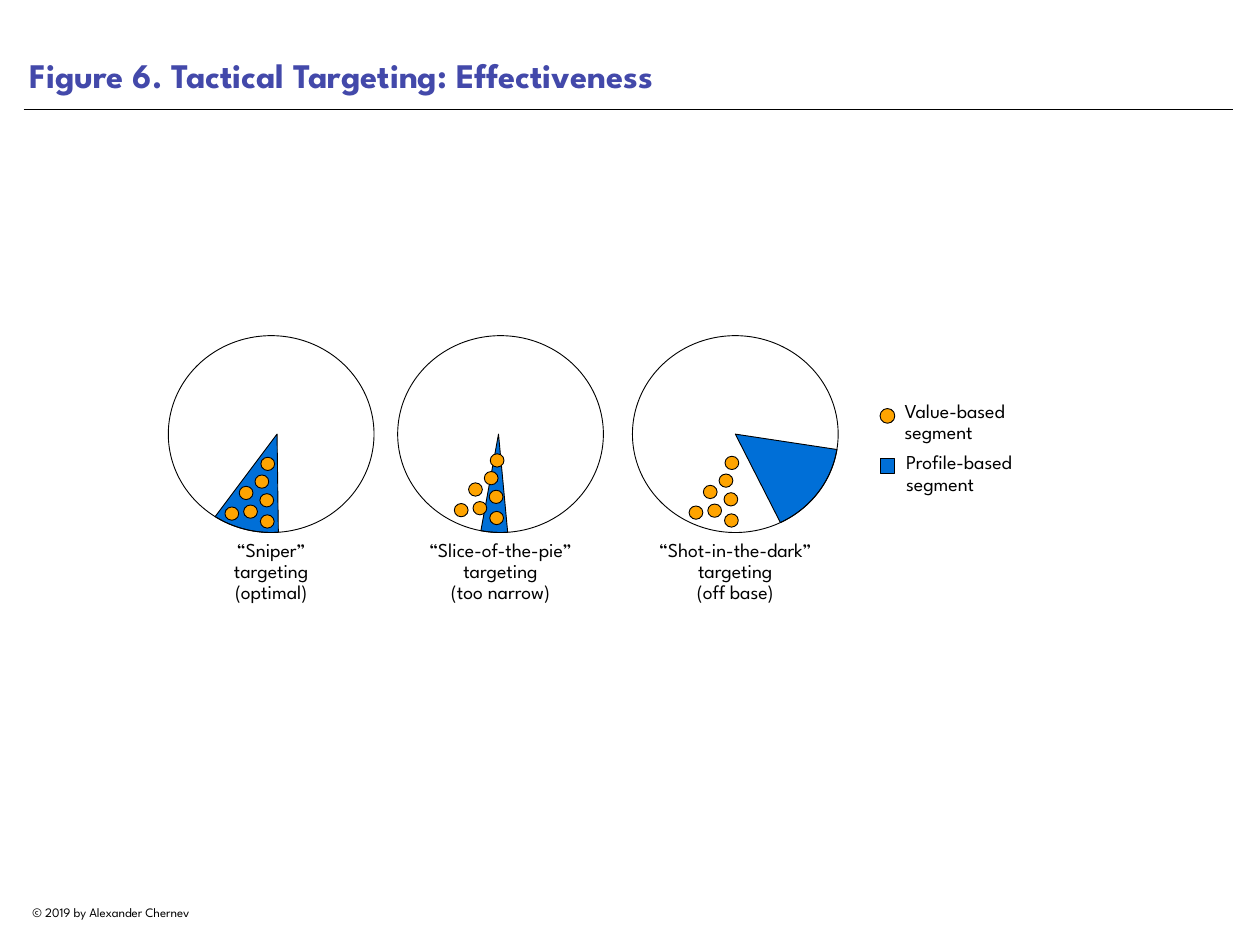
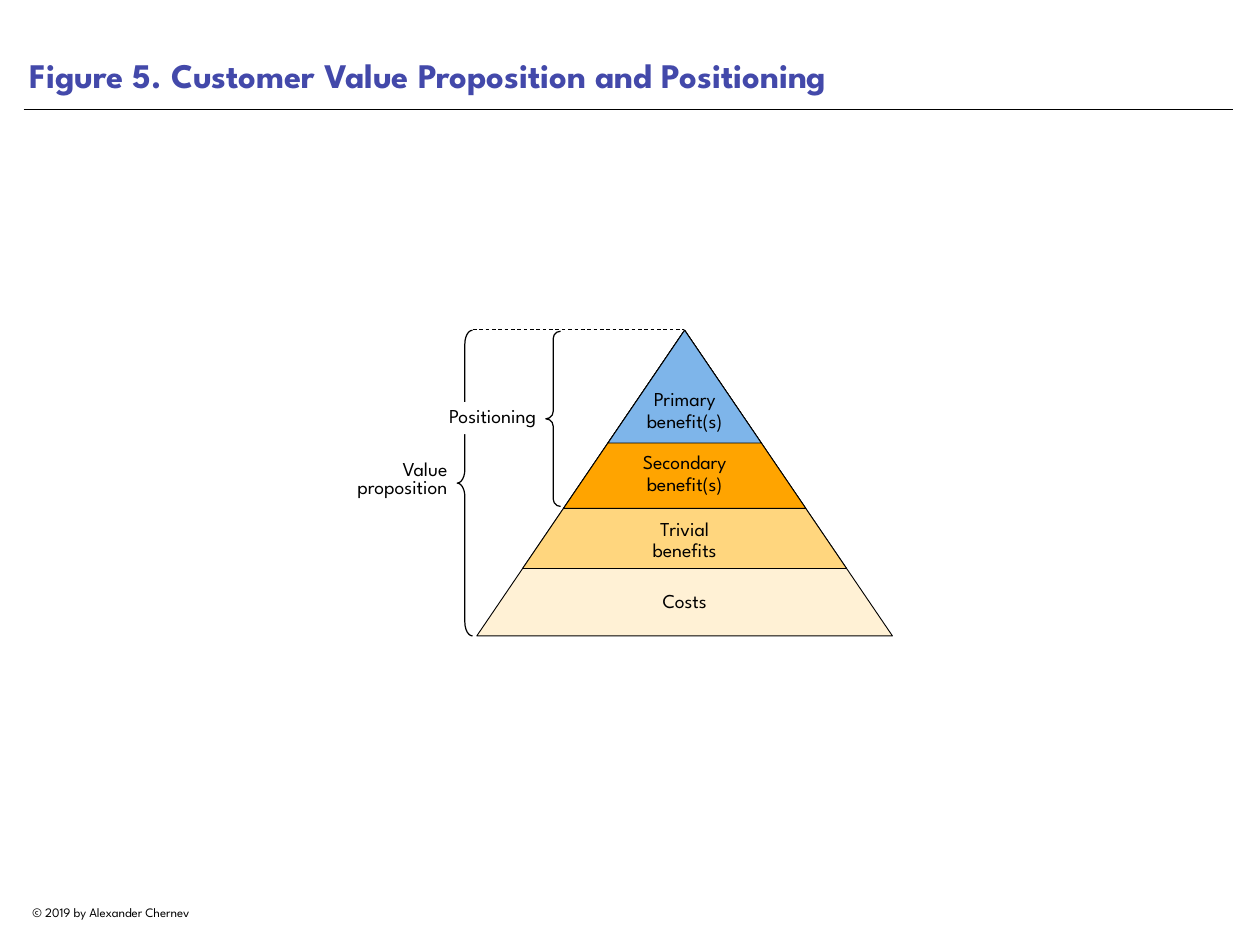
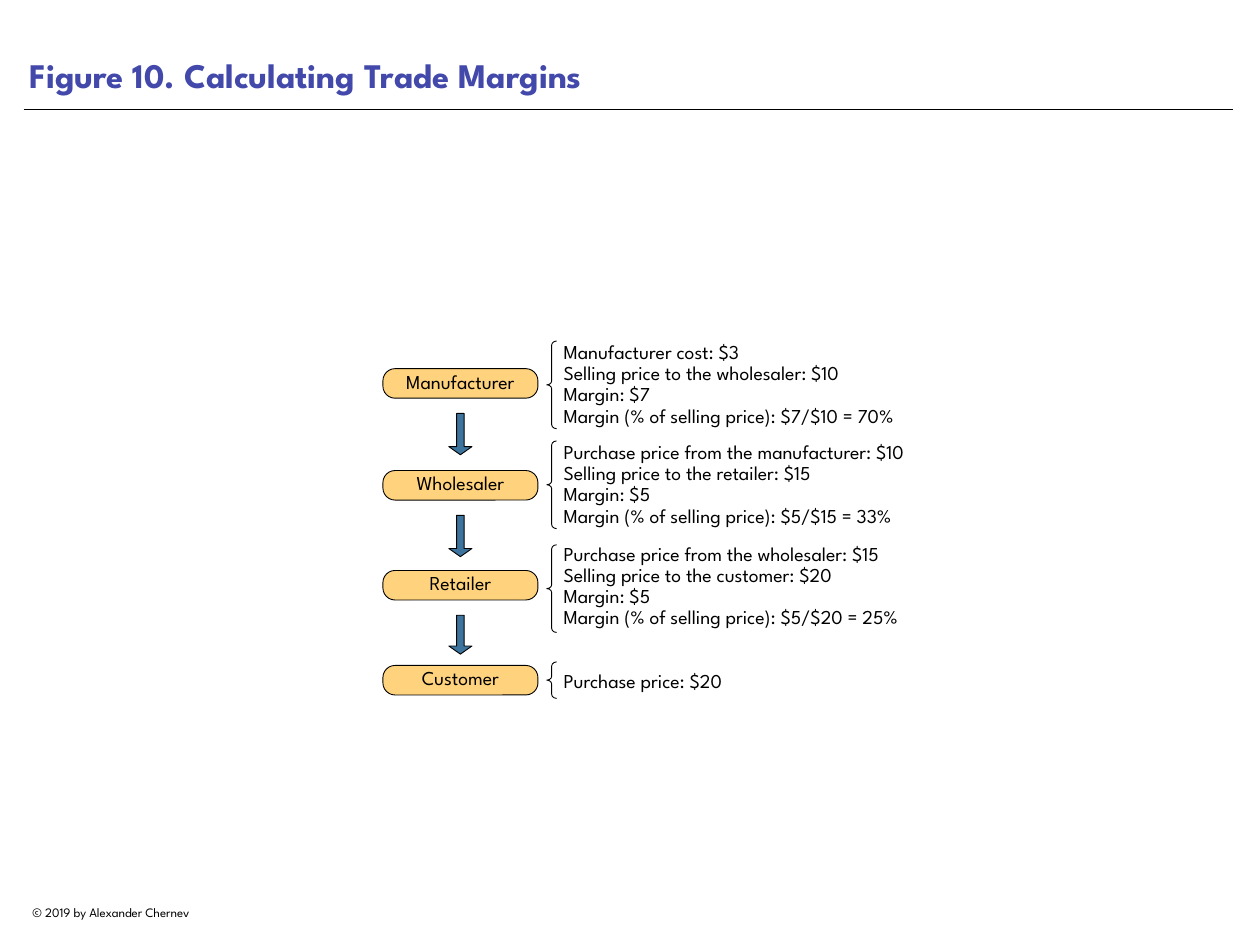
"""Build three marketing figures: targeting, positioning and trade margins."""
import math

import pptx
import pptx.dml.color
import pptx.enum.dml
import pptx.enum.shapes
import pptx.enum.text
import pptx.oxml.ns
import pptx.util
from lxml import etree

COLORS = {
    "title": "4349AA",
    "ink": "000000",
    "paper": "FFFFFF",
    "profile": "006FD7",
    "value": "FFA400",
    "primary": "7EB5EA",
    "trivial": "FFD67E",
    "costs": "FFF1D5",
    "stage": "FFD37D",
    "arrow": "3D749D",
}
FONT = "League Spartan"
KIND = pptx.enum.shapes.MSO_SHAPE
ALIGN = pptx.enum.text.PP_ALIGN
ANCHOR = pptx.enum.text.MSO_ANCHOR

deck = pptx.Presentation()
deck.slide_width = pptx.util.Pt(1024)
deck.slide_height = pptx.util.Pt(768)
CELL = deck.slide_width / 128


def draw(slide, kind, box, fill=None, weight=0.75):
    """Add a preset shape; box is left, top, width, height in grid cells."""
    shape = slide.shapes.add_shape(kind, *[int(CELL * n) for n in box])
    shape.shadow.inherit = False
    if fill:
        shape.fill.solid()
        shape.fill.fore_color.rgb = pptx.dml.color.RGBColor.from_string(COLORS[fill])
    else:
        shape.fill.background()
    if weight:
        shape.line.color.rgb = pptx.dml.color.RGBColor.from_string(COLORS["ink"])
        shape.line.width = pptx.util.Pt(weight)
    else:
        shape.line.fill.background()
    return shape


def write(holder, text, align=ALIGN.LEFT, anchor=ANCHOR.TOP, size=16, color="ink",
          bold=False, spacing=0.9, margins=(0, 0)):
    """Set the text of a shape; margins are side and top in points."""
    frame = holder.text_frame
    frame.word_wrap = True
    frame.vertical_anchor = anchor
    frame.margin_left = frame.margin_right = pptx.util.Pt(margins[0])
    frame.margin_top = frame.margin_bottom = pptx.util.Pt(margins[1])
    frame.text = text
    for paragraph in frame.paragraphs:
        paragraph.alignment = align
        paragraph.line_spacing = spacing
        paragraph.font.name = FONT
        paragraph.font.size = pptx.util.Pt(size)
        paragraph.font.bold = bold
        paragraph.font.color.rgb = pptx.dml.color.RGBColor.from_string(COLORS[color])


titles = [
    "Figure 6. Tactical Targeting: Effectiveness",
    "Figure 5. Customer Value Proposition and Positioning",
    "Figure 10. Calculating Trade Margins",
]
slides = []
for title in titles:
    slide = deck.slides.add_slide(deck.slide_layouts[6])
    slides.append(slide)
    footer = slide.shapes.add_textbox(*[int(CELL * n) for n in (2.4, 91.45, 21.1, 2.5)])
    write(footer, "© 2019 by Alexander Chernev", size=10.5, spacing=1, margins=(7.2, 3.6))
    heading = slide.shapes.add_textbox(*[int(CELL * n) for n in (2.4, 0, 122.8, 10.35)])
    write(heading, title, anchor=ANCHOR.BOTTOM, size=28, color="title", bold=True,
          spacing=1, margins=(5, 5))
targeting, positioning, margins = slides

rules = [(slide, 2.4, 125.25, 11.15, 0.5, None) for slide in slides]
rules.append((positioning, 48.05, 69.5, 33.5, 0.75, pptx.enum.dml.MSO_LINE.DASH))
for slide, start, end, height, weight, dash in rules:
    rule = slide.shapes.add_connector(
        pptx.enum.shapes.MSO_CONNECTOR.STRAIGHT,
        *[int(CELL * n) for n in (start, height, end, height)])
    rule.line.color.rgb = pptx.dml.color.RGBColor.from_string(COLORS["ink"])
    rule.line.width = pptx.util.Pt(weight)
    if dash:
        rule.line.dash_style = dash
    etree.SubElement(rule._element.spPr, pptx.oxml.ns.qn("a:effectLst"))

market_y, radius_x, radius_y = 44.1, 10.45, 10
customers = [(0, 0), (0.05, -5.85), (-0.55, -4.05), (-3.6, -0.8), (-1.7, -1),
             (-2.15, -2.9), (-0.05, -2.15)]
strategies = [
    ("“Sniper”\ntargeting\n(optimal)", 27.55, 0.6, 86, 123, 52.3),
    ("“Slice-of-the-pie”\ntargeting\n(too narrow)", 50.85, -0.2, 86, 101, 51.95),
    ("“Shot-in-the-dark”\ntargeting\n(off base)", 74.7, 0, 9, 64, 52.2),
]
for caption, market_x, apex_shift, first, last, lowest in strategies:
    rim = [(CELL * (market_x + radius_x * math.cos(math.radians(angle))),
            CELL * (market_y + radius_y * math.sin(math.radians(angle))))
           for angle in range(first, last + 1)]
    outline = targeting.shapes.build_freeform(
        int(CELL * (market_x + apex_shift)), int(CELL * market_y))
    outline.add_line_segments(rim, close=True)
    profile = outline.convert_to_shape()
    profile.shadow.inherit = False
    profile.fill.solid()
    profile.fill.fore_color.rgb = pptx.dml.color.RGBColor.from_string(COLORS["profile"])
    profile.line.color.rgb = pptx.dml.color.RGBColor.from_string(COLORS["ink"])
    profile.line.width = pptx.util.Pt(0.75)
    draw(targeting, KIND.OVAL, (market_x - radius_x, market_y - radius_y,
                                2 * radius_x, 2 * radius_y))
    for across, down in customers:
        draw(targeting, KIND.OVAL,
             (market_x - 1.1 + across, lowest + down, 1.4, 1.35), "value")
    label = targeting.shapes.add_textbox(
        *[int(CELL * n) for n in (market_x - 13.5, 54.9, 27, 7)])
    write(label, caption, ALIGN.CENTER)

legend = [
    ("Value-based segment", KIND.OVAL, "value", 91.9, 40.75, 41.5),
    ("Profile-based segment", KIND.RECTANGLE, "profile", 92.05, 46, 46.6),
]
for meaning, kind, fill, left, top, key_top in legend:
    draw(targeting, kind, (89.4, key_top, 1.5, 1.5), fill)
    label = targeting.shapes.add_textbox(*[int(CELL * n) for n in (left, top, 14, 4.8)])
    write(label, meaning)

spans = [
    ("Value proposition", (46.45, 33.55, 1.55, 31.05), 0.9, (33.3, 45.7, 12.15, 6.1)),
    ("Positioning", (55.45, 33.65, 1.5, 17.8), 0.5, (42.3, 40.85, 12.15, 3.25)),
]
for name, brace_box, curl, label_box in spans:
    brace = draw(positioning, KIND.LEFT_BRACE, brace_box, weight=1)
    brace.adjustments[0] = curl
    label = draw(positioning, KIND.RECTANGLE, label_box, "paper", weight=0)
    write(label, name, ALIGN.RIGHT, ANCHOR.MIDDLE, spacing=0.8)

peak_x, peak_y, slope = 69.55, 33.55, 0.68
tiers = [
    ("Costs", "costs", 64.6, 60.1),
    ("Trivial\nbenefits", "trivial", 57.75, 52.75),
    ("Secondary\nbenefit(s)", "value", 51.65, 46),
    ("Primary\nbenefit(s)", "primary", 45, 39.6),
]
for name, fill, base, label_top in tiers:
    height = base - peak_y
    draw(positioning, KIND.ISOSCELES_TRIANGLE,
         (peak_x - slope * height, peak_y, 2 * slope * height, height), fill)
    label = positioning.shapes.add_textbox(
        *[int(CELL * n) for n in (peak_x - 7, label_top, 14, 5)])
    write(label, name, ALIGN.CENTER)

stages = [
    ("Manufacturer", 37.45, 4.2, 39.1, 39.1, 8.9,
     "Manufacturer cost: $3\nSelling price to the wholesaler: $10\n"
     "Margin: $7\nMargin (% of selling price): $7/$10 = 70%"),
    ("Wholesaler", 47.8, 4.2, 49.25, 49.25, 8.9,
     "Purchase price from the manufacturer: $10\nSelling price to the retailer: $15\n"
     "Margin: $5\nMargin (% of selling price): $5/$15 = 33%"),
    ("Retailer", 57.95, 3.95, 59.8, 59.6, 8.9,
     "Purchase price from the wholesaler: $15\nSelling price to the customer: $20\n"
     "Margin: $5\nMargin (% of selling price): $5/$20 = 25%"),
    ("Customer", 67.6, None, 69.1, 69.35, 3.7, "Purchase price: $20"),
]
stage_x, stage_width, stage_height = 38.9, 15.75, 3
for name, top, arrow_height, brace_y, prices_y, brace_height, prices in stages:
    stage = draw(margins, KIND.ROUNDED_RECTANGLE,
                 (stage_x, top, stage_width, stage_height), "stage")
    stage.adjustments[0] = 0.41
    write(stage, name, ALIGN.CENTER, ANCHOR.MIDDLE, spacing=0.8)
    if arrow_height:
        arrow = draw(margins, KIND.DOWN_ARROW,
                     (stage_x + stage_width / 2 - 1.18, top + stage_height + 1.55,
                      2.35, arrow_height), "arrow")
        arrow.adjustments[0] = 0.33
        arrow.adjustments[1] = 0.35
    brace = draw(margins, KIND.LEFT_BRACE,
                 (55.55, brace_y - brace_height / 2, 1, brace_height))
    brace.adjustments[0] = 0.4
    details = margins.shapes.add_textbox(
        *[int(CELL * n) for n in (57.25, prices_y - 5.18, 42.1, 10.35)])
    write(details, prices, anchor=ANCHOR.MIDDLE)

deck.save("out.pptx")
